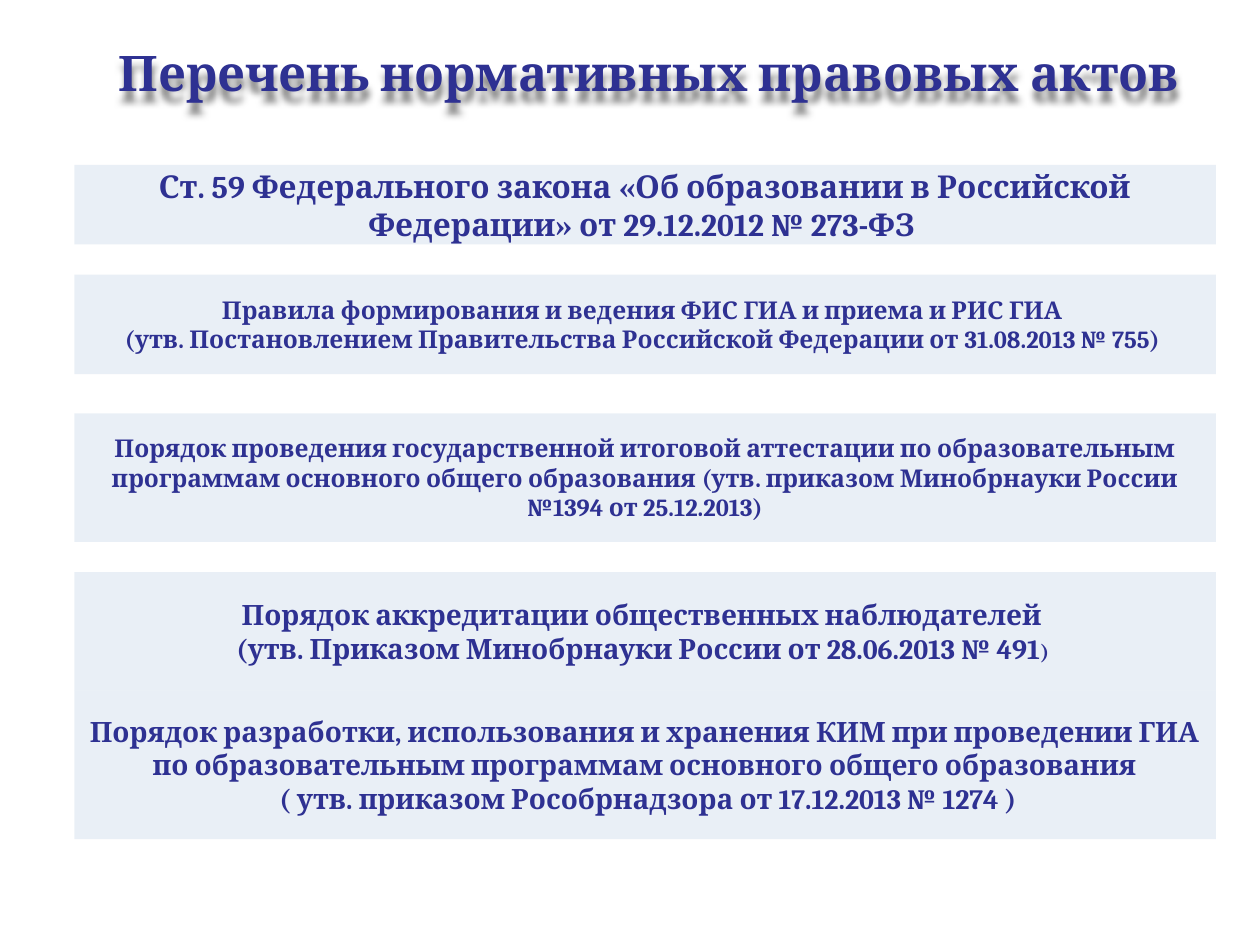
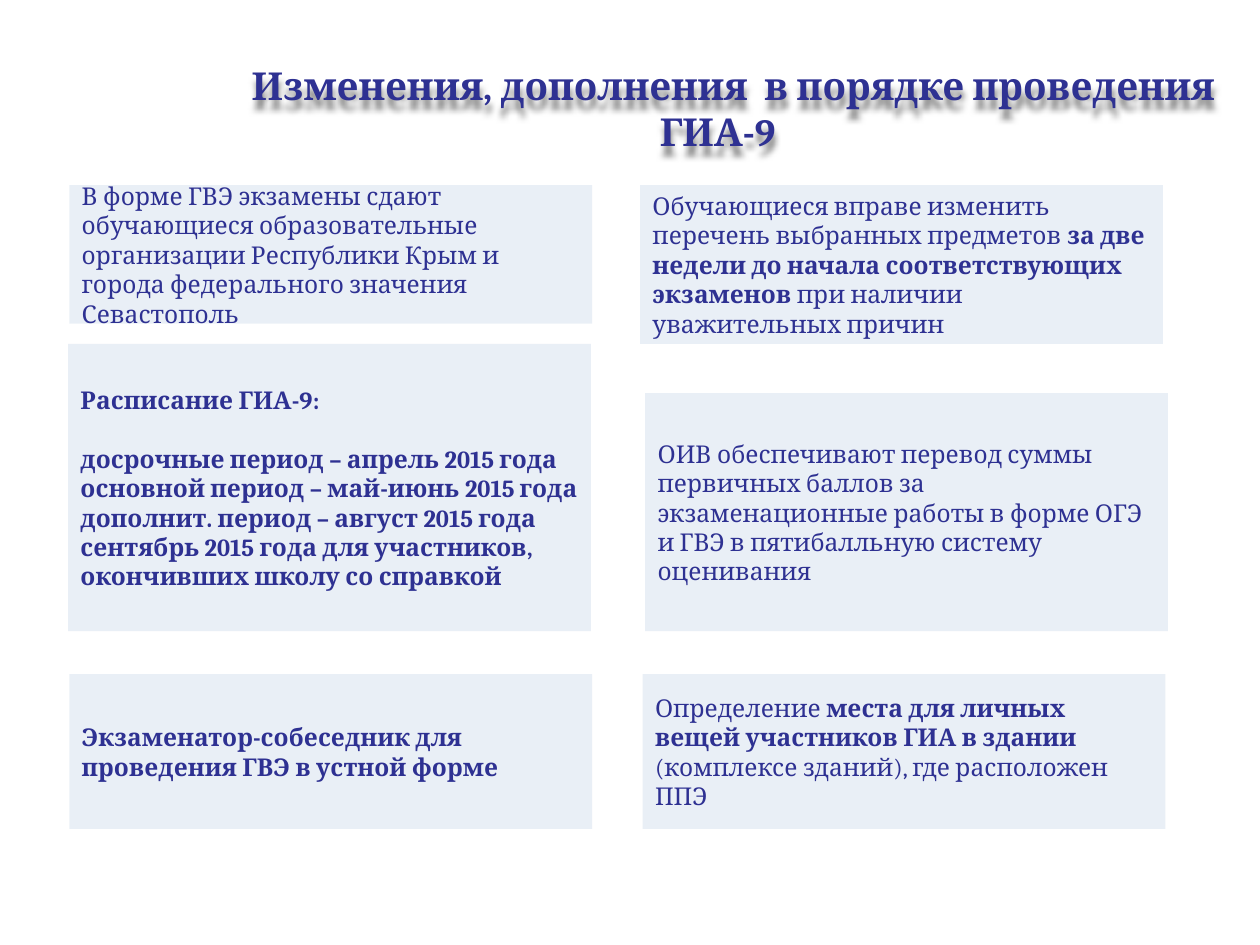
"""Build two slides on the rules for state final certification."""
from dataclasses import dataclass

from lxml import etree
from pptx import Presentation
from pptx import util as u
from pptx.dml.color import RGBColor
from pptx.enum import shapes, text
from pptx.oxml import ns

FONT = "Cambria"
INK = "2E3192"
PANEL_FILL = "B9CDE5"
PANEL_OPACITY = 31
TITLE_ONLY = 5
CENTER = text.PP_ALIGN.CENTER
LEFT = text.PP_ALIGN.LEFT


@dataclass(frozen=True)
class Span:
    words: str
    size: int = 14
    bold: bool = True


@dataclass(frozen=True)
class Para:
    spans: tuple[Span, ...]
    space_before: int = 0
    first_indent: float = 0


@dataclass(frozen=True)
class Area:
    left: float
    top: float
    width: float
    height: float


@dataclass(frozen=True)
class Panel:
    area: Area
    paras: tuple[Para, ...]


def color(value: str) -> RGBColor:
    return RGBColor.from_string(value)


def line(words: str, size: int = 14, bold: bool = True, space_before: int = 0) -> Para:
    return Para((Span(words, size, bold),), space_before)


def mixed(before: str, strong: str, after: str) -> Para:
    return Para((Span(before, bold=False), Span(strong), Span(after, bold=False)))


def write(frame, paras: tuple[Para, ...], align, anchor) -> None:
    frame.word_wrap = True
    frame.auto_size = text.MSO_AUTO_SIZE.NONE
    frame.vertical_anchor = anchor
    for index, content in enumerate(paras):
        para = frame.paragraphs[0] if index == 0 else frame.add_paragraph()
        para.alignment = align
        para.space_before = u.Pt(content.space_before)
        if content.first_indent:
            para._p.get_or_add_pPr().set("indent", str(u.Inches(content.first_indent)))
        for part in content.spans:
            span = para.add_run()
            span.text = part.words
            span.font.name = FONT
            span.font.size = u.Pt(part.size)
            span.font.bold = part.bold
            span.font.color.rgb = color(INK)


def add_title_shadow(title) -> None:
    effects = etree.SubElement(title._element.spPr, ns.qn("a:effectLst"))
    shadow = etree.SubElement(
        effects, ns.qn("a:outerShdw"), blurRad=str(u.Pt(4)), dist=str(u.Pt(5)),
        dir="5400000", algn="t", rotWithShape="0")
    black = etree.SubElement(shadow, ns.qn("a:srgbClr"), val="000000")
    etree.SubElement(black, ns.qn("a:alpha"), val="50000")


def place(shape, area: Area) -> None:
    shape.left, shape.top = u.Inches(area.left), u.Inches(area.top)
    shape.width, shape.height = u.Inches(area.width), u.Inches(area.height)


def add_panel(page, panel: Panel, align) -> None:
    box = page.shapes.add_shape(shapes.MSO_SHAPE.RECTANGLE, 0, 0, 0, 0)
    place(box, panel.area)
    box.shadow.inherit = False
    box.line.fill.background()
    box.fill.solid()
    box.fill.fore_color.rgb = color(PANEL_FILL)
    fill = box._element.spPr.find(f".//{ns.qn('a:srgbClr')}")
    etree.SubElement(fill, ns.qn("a:alpha"), val=str(PANEL_OPACITY * 1000))
    write(box.text_frame, panel.paras, align, text.MSO_ANCHOR.MIDDLE)


def add_page(deck, area: Area, heading: Para, panels: list[Panel], align) -> None:
    page = deck.slides.add_slide(deck.slide_layouts[TITLE_ONLY])
    title = page.shapes.title
    place(title, area)
    write(title.text_frame, (heading,), CENTER, text.MSO_ANCHOR.TOP)
    add_title_shadow(title)
    for panel in panels:
        add_panel(page, panel, align)


def act(top: float, height: float, *paras: Para) -> Panel:
    return Panel(Area(0.59, top, 9.06, height), paras)


def change(left: float, top: float, height: float, *paras: Para) -> Panel:
    return Panel(Area(left, top, 4.15, height), paras)


ACTS = [
    act(1.31, 0.63, line("Ст. 59 Федерального закона «Об образовании в Российской "
                         "Федерации» от 29.12.2012 № 273-ФЗ ", 18)),
    act(2.18, 0.79,
        line("Правила формирования и ведения ФИС ГИА и приема и РИС ГИА "),
        line("(утв. Постановлением Правительства Российской Федерации "
             "от 31.08.2013 № 755) ")),
    act(3.28, 1.02, line("Порядок проведения государственной итоговой аттестации по "
                         "образовательным программам основного общего образования "
                         "(утв. приказом Минобрнауки России №1394 от 25.12.2013)")),
    act(4.54, 0.94,
        line("Порядок аккредитации общественных наблюдателей ", 16),
        Para((Span("(утв. Приказом Минобрнауки России от 28.06.2013 № 491", 16),
              Span(") ", 12)))),
    act(5.48, 1.18,
        line("Порядок разработки, использования и хранения КИМ при проведении ГИА "
             "по образовательным программам основного общего образования", 16),
        line(" ( утв. приказом Рособрнадзора от 17.12.2013 № 1274 )", 16)),
]

CHANGES = [
    change(0.55, 1.47, 1.1,
           line("В форме ГВЭ экзамены сдают обучающиеся образовательные организации "
                "Республики Крым и города федерального значения Севастополь", bold=False)),
    change(5.08, 1.47, 1.26,
           mixed("Обучающиеся вправе изменить перечень выбранных предметов ",
                 "за две недели до начала соответствующих экзаменов ",
                 "при наличии уважительных причин")),
    change(0.54, 2.73, 2.28,
           line("Расписание ГИА-9:"),
           line("досрочные период – апрель 2015 года", space_before=17),
           line("основной период – май-июнь 2015 года"),
           line("дополнит. период – август 2015 года"),
           line("сентябрь 2015 года для участников, окончивших школу со справкой")),
    change(5.12, 3.12, 1.89,
           line("ОИВ обеспечивают перевод суммы первичных баллов за экзаменационные "
                "работы в форме ОГЭ и ГВЭ в пятибалльную систему оценивания", bold=False)),
    change(0.55, 5.35, 1.23,
           line("Экзаменатор-собеседник для проведения ГВЭ в устной форме")),
    change(5.1, 5.35, 1.23,
           mixed("Определение ", "места для личных вещей участников ГИА в здании ",
                 "(комплексе зданий), где расположен ППЭ")),
]


def main() -> None:
    deck = Presentation()
    deck.slide_width, deck.slide_height = u.Inches(10), u.Inches(7.5)
    add_page(deck, Area(0.59, 0.29, 9.21, 0.57),
             line("Перечень нормативных правовых актов ", 28), ACTS, CENTER)
    heading = Span("Изменения, дополнения  в порядке проведения ГИА-9", 22)
    add_page(deck, Area(1.6, 0.44, 8.19, 0.84),
             Para((heading,), first_indent=0.25), CHANGES, LEFT)
    deck.save("out.pptx")


if __name__ == "__main__":
    main()
